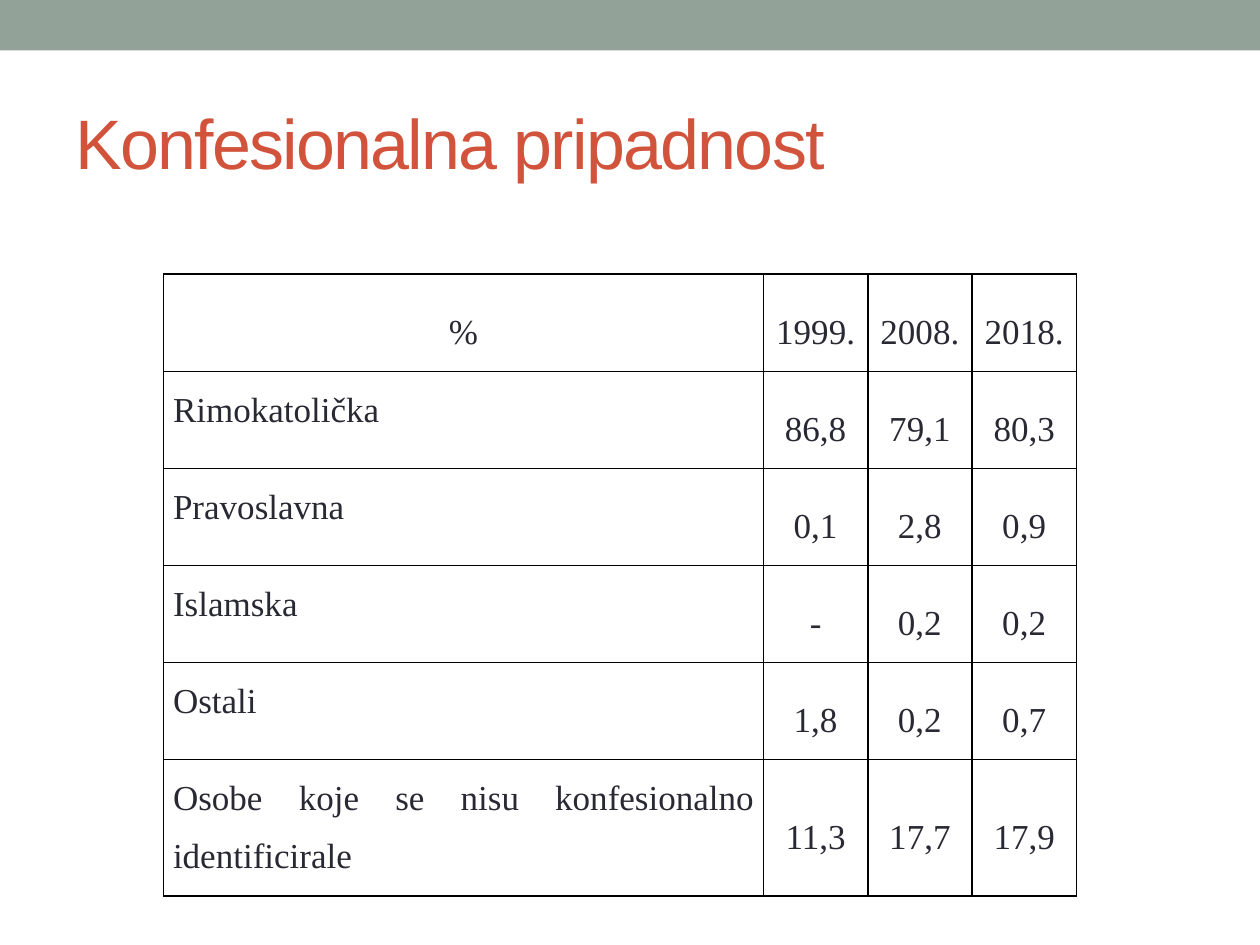
import pptx
import pptx.dml.color
import pptx.enum.shapes
import pptx.enum.text
import pptx.oxml
import pptx.oxml.ns
import pptx.util

Pt = pptx.util.Pt
ALIGN = pptx.enum.text.PP_ALIGN
ANCHOR = pptx.enum.text.MSO_ANCHOR

ROWS = [
    ("%", "1999.", "2008.", "2018."),
    ("Rimokatolička", "86,8", "79,1", "80,3"),
    ("Pravoslavna", "0,1", "2,8", "0,9"),
    ("Islamska", "-", "0,2", "0,2"),
    ("Ostali", "1,8", "0,2", "0,7"),
    ("Osobe koje se nisu konfesionalno identificirale", "11,3", "17,7", "17,9"),
]


def color(value):
    """Turn a hex string into a colour."""
    return pptx.dml.color.RGBColor.from_string(value)


def add_span(para, text, font, size, ink):
    """Add one formatted run to a paragraph."""
    span = para.add_run()
    span.text = text
    span.font.name = font
    span.font.size = Pt(size)
    span.font.color.rgb = color(ink)
    return span


def add_band(page, left, top, width, height):
    """Draw the plain band along the top of the page."""
    band = page.shapes.add_shape(
        pptx.enum.shapes.MSO_SHAPE.RECTANGLE, Pt(left), Pt(top), Pt(width), Pt(height))
    band.shadow.inherit = False
    band.fill.solid()
    band.fill.fore_color.rgb = color("93A299")
    band.line.fill.background()


def add_title(page, left, top, width, height):
    """Write the page title, centred vertically in its box."""
    box = page.shapes.add_textbox(Pt(left), Pt(top), Pt(width), Pt(height))
    frame = box.text_frame
    frame.word_wrap = True
    frame.vertical_anchor = ANCHOR.MIDDLE
    span = add_span(frame.paragraphs[0], "Konfesionalna pripadnost", "Arial", 40, "D2533C")
    span.font._element.set("spc", "-100")


def add_borders(cell, ink, width):
    """Put a solid line on all four sides of a cell."""
    properties = cell._tc.get_or_add_tcPr()
    for index, side in enumerate(("lnL", "lnR", "lnT", "lnB")):
        line = pptx.oxml.parse_xml(
            f'<a:{side} {pptx.oxml.ns.nsdecls("a")} w="{Pt(width)}">'
            f'<a:solidFill><a:srgbClr val="{ink}"/></a:solidFill></a:{side}>')
        properties.insert(index, line)


def fill_cell(cell, text, is_label):
    """Write and style one table cell."""
    cell.fill.background()
    cell.margin_left = cell.margin_right = Pt(5.4)
    cell.margin_top = cell.margin_bottom = 0
    cell.vertical_anchor = ANCHOR.TOP if is_label else ANCHOR.MIDDLE
    para = cell.text_frame.paragraphs[0]
    para.alignment = ALIGN.JUSTIFY if is_label else ALIGN.CENTER
    para.line_spacing = 1.5
    para.space_before = Pt(6)
    add_span(para, text, "Times New Roman", 20, "292934")
    add_borders(cell, "000000", 1)


def add_affiliation_table(page, left, top, width, height):
    """Build the table of affiliation shares by year."""
    year_width, last_height = 59.6, 78
    row_count, column_count = len(ROWS), len(ROWS[0])
    table = page.shapes.add_table(
        row_count, column_count, Pt(left), Pt(top), Pt(width), Pt(height)).table
    table.first_row = table.horz_banding = False
    for index, column in enumerate(table.columns):
        column.width = Pt(year_width if index else width - year_width * (column_count - 1))
    for index, row in enumerate(table.rows):
        is_last = index == row_count - 1
        row.height = Pt(last_height if is_last else (height - last_height) / (row_count - 1))
        for position, text in enumerate(ROWS[index]):
            fill_cell(table.cell(index, position), text, index > 0 and position == 0)


def main():
    """Build the deck and save it."""
    deck = pptx.Presentation()
    deck.slide_width, deck.slide_height = Pt(720), Pt(540)
    page = deck.slides.add_slide(deck.slide_layouts[6])
    add_band(page, 0, 0, 720, 28.8)
    add_title(page, 36, 42, 648, 78)
    add_affiliation_table(page, 93.5, 156.7, 521.6, 355.5)
    deck.save("out.pptx")


if __name__ == "__main__":
    main()
